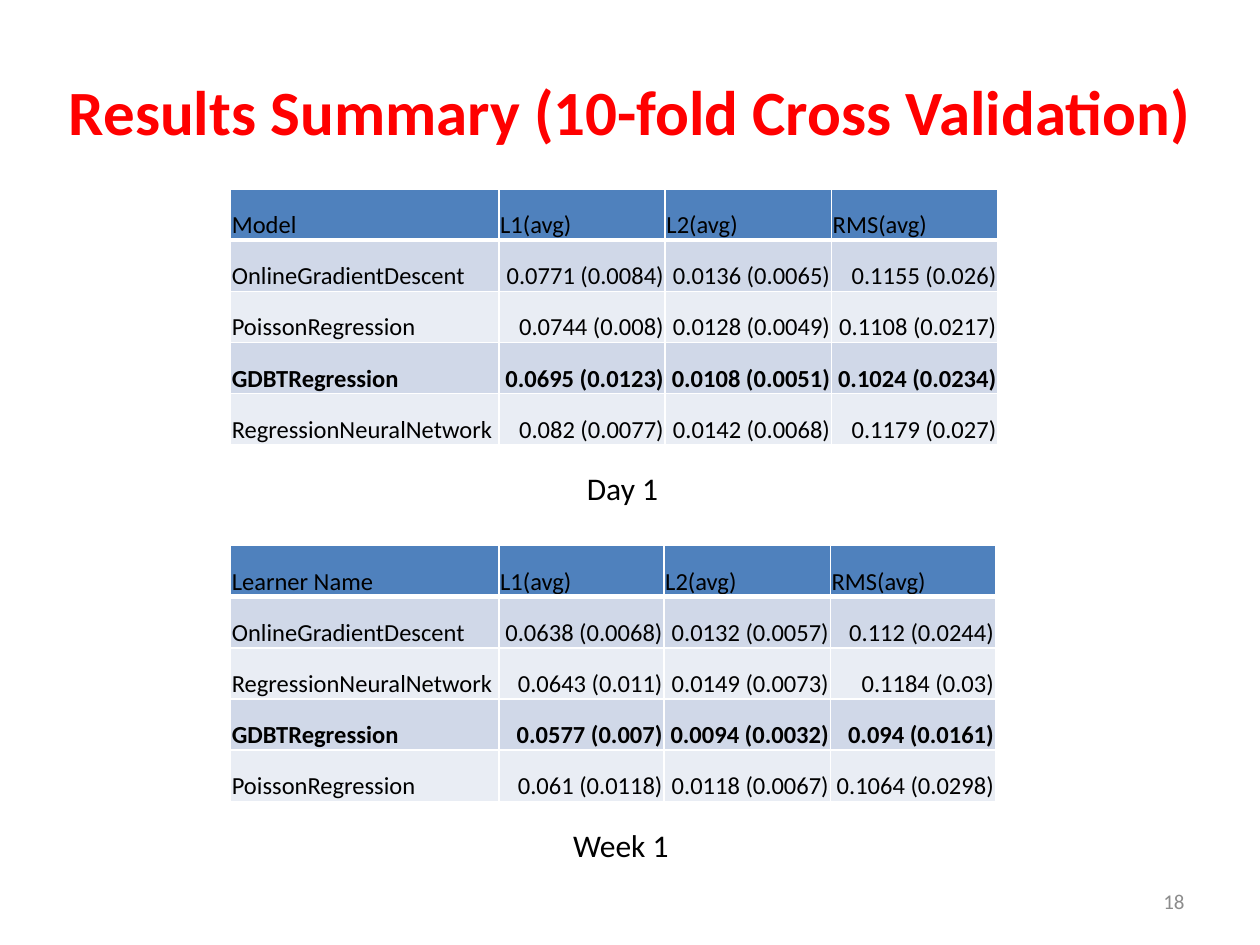
"""Build the results summary slide with two tables of model errors."""
from lxml import etree
from pptx import Presentation
from pptx import util as u
from pptx.dml.color import RGBColor
from pptx.enum import text as t
from pptx.oxml import ns

HEADS = ["L1(avg)", "L2(avg)", "RMS(avg)"]
DAY = [
    ["Model", *HEADS],
    ["OnlineGradientDescent", "0.0771 (0.0084)", "0.0136 (0.0065)", "0.1155 (0.026)"],
    ["PoissonRegression", "0.0744 (0.008)", "0.0128 (0.0049)", "0.1108 (0.0217)"],
    ["GDBTRegression", "0.0695 (0.0123)", "0.0108 (0.0051)", "0.1024 (0.0234)"],
    ["RegressionNeuralNetwork", "0.082 (0.0077)", "0.0142 (0.0068)", "0.1179 (0.027)"],
]
WEEK = [
    ["Learner Name", *HEADS],
    ["OnlineGradientDescent", "0.0638 (0.0068)", "0.0132 (0.0057)", "0.112 (0.0244)"],
    ["RegressionNeuralNetwork", "0.0643 (0.011)", "0.0149 (0.0073)", "0.1184 (0.03)"],
    ["GDBTRegression", "0.0577 (0.007)", "0.0094 (0.0032)", "0.094 (0.0161)"],
    ["PoissonRegression", "0.061 (0.0118)", "0.0118 (0.0067)", "0.1064 (0.0298)"],
]
BEST = "GDBTRegression"


def paint(part, color):
    part.solid()
    part.fore_color.rgb = RGBColor.from_string(color)


def write(frame, words, size=18, color="000000", bold=False, align="LEFT"):
    para = frame.paragraphs[0]
    para.alignment = t.PP_ALIGN[align]
    run = para.add_run()
    run.text = words
    run.font.name = "Calibri"
    run.font.size = u.Pt(size)
    run.font.bold = bold
    paint(run.font.fill, color)


def edge(cell, side, width, color="FFFFFF"):
    props = cell._tc.get_or_add_tcPr()
    line = etree.SubElement(props, ns.qn(f"a:ln{side}"), w=str(u.Pt(width)))
    fill = etree.SubElement(line, ns.qn("a:solidFill"))
    etree.SubElement(fill, ns.qn("a:srgbClr"), val=color)


class Deck:
    """Hold the table style and the current slide."""

    head, bands = "4F81BD", ("E9EDF4", "D0D8E8")

    def __init__(self):
        self.pres = Presentation()
        self.pres.slide_width, self.pres.slide_height = u.Inches(10), u.Inches(7.5)
        self.slide = self.pres.slides.add_slide(self.pres.slide_layouts[5])

    def title(self, words, x, y, w, h):
        shape = self.slide.shapes.title
        shape.left, shape.top = u.Inches(x), u.Inches(y)
        shape.width, shape.height = u.Inches(w), u.Inches(h)
        shape.text_frame.vertical_anchor = t.MSO_ANCHOR.MIDDLE
        write(shape.text_frame, words, size=36, color="FF0000", bold=True, align="CENTER")

    def label(self, words, x, y, w, h=0.4, wrap=False, anchor="TOP", **style):
        box = self.slide.shapes.add_textbox(*map(u.Inches, (x, y, w, h)))
        box.text_frame.word_wrap = wrap
        box.text_frame.vertical_anchor = t.MSO_ANCHOR[anchor]
        write(box.text_frame, words, **style)

    def table(self, rows, x, y, widths, high=2.03):
        frame = self.slide.shapes.add_table(
            len(rows), len(widths), *map(u.Inches, (x, y, sum(widths), high)))
        grid = frame.table
        for col, width in zip(grid.columns, widths):
            col.width = u.Inches(width)
        for r, row in enumerate(rows):
            for c, words in enumerate(row):
                self.cell(grid.cell(r, c), words, r, c, bold=row[0] == BEST)

    def cell(self, cell, words, r, c, bold):
        cell.margin_left = cell.margin_right = cell.margin_top = u.Inches(0.01)
        cell.margin_bottom = 0
        cell.vertical_anchor = t.MSO_ANCHOR.BOTTOM
        widths = {"L": 1, "R": 1, "T": 3 if r == 1 else 1, "B": 3 if r == 0 else 1}
        for side, width in widths.items():
            edge(cell, side, width)
        paint(cell.fill, self.bands[r % 2] if r else self.head)
        write(cell.text_frame, words, size=14, bold=bold,
              align="RIGHT" if r and c else "LEFT")

    def save(self):
        self.pres.save("out.pptx")


def main():
    deck = Deck()
    deck.title("Results Summary (10-fold Cross Validation)", 0, 0.25, 10, 1.25)
    deck.table(DAY, 1.83, 1.5, [2.13, 1.32, 1.32, 1.32])
    deck.table(WEEK, 1.83, 4.33, [2.13, 1.31, 1.32, 1.31])
    deck.label("Day 1", 4.56, 3.67, 0.77)
    deck.label("Week 1", 4.45, 6.51, 0.97)
    deck.label("18", 7.17, 6.95, 2.33, wrap=True, anchor="MIDDLE",
               size=12, color="8C8C8C", align="RIGHT")
    deck.save()


if __name__ == "__main__":
    main()
